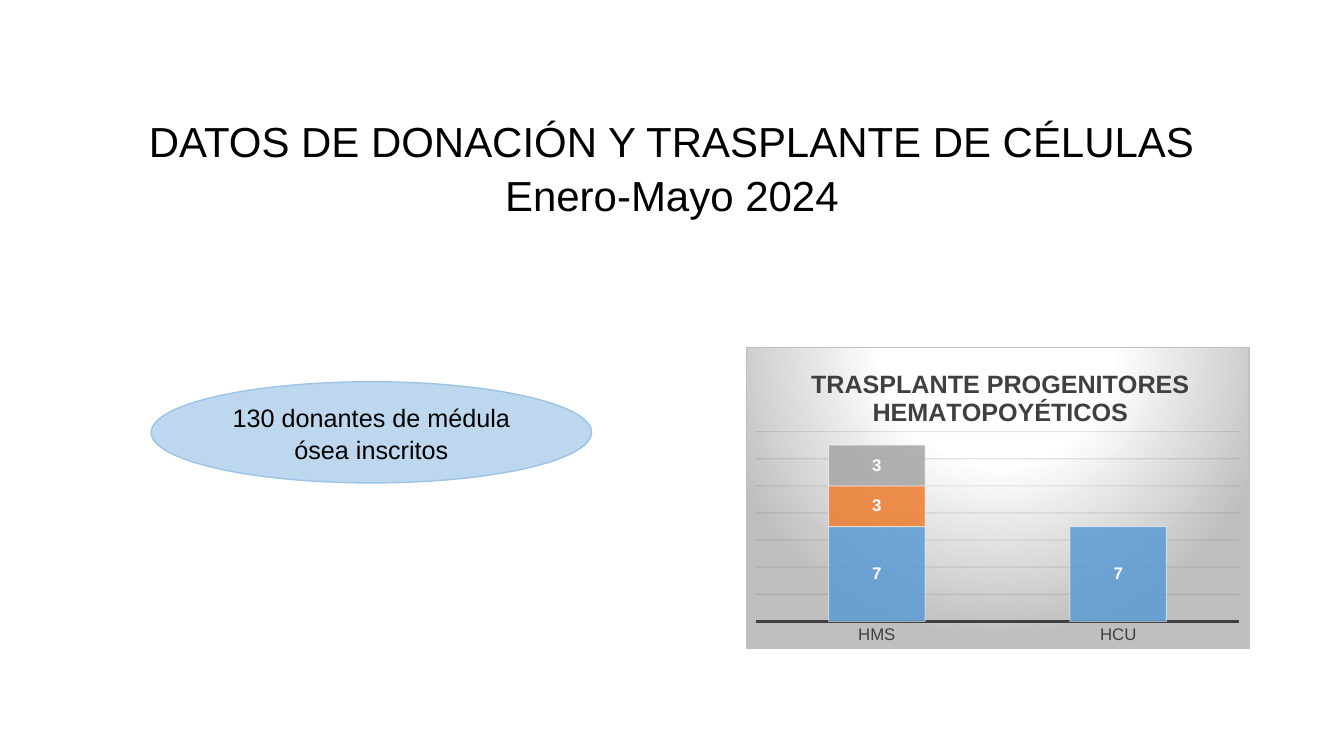
from lxml.etree import SubElement
from pptx import Presentation
from pptx.chart.data import CategoryChartData
from pptx.dml.color import RGBColor
from pptx.enum.chart import XL_CHART_TYPE, XL_LABEL_POSITION, XL_TICK_MARK
from pptx.enum.shapes import MSO_SHAPE
from pptx.enum.text import MSO_ANCHOR, MSO_AUTO_SIZE, PP_ALIGN
from pptx.oxml import parse_xml
from pptx.oxml.ns import nsdecls, qn
from pptx.util import Cm, Pt


def paint(target, color):
    """Give a fill a solid colour."""
    target.solid()
    target.fore_color.rgb = RGBColor.from_string(color)


def style(font, size, color, bold=False):
    """Set the Arial font used across the slide."""
    font.name = "Arial"
    font.size = Pt(size)
    font.bold = bold
    font.color.rgb = RGBColor.from_string(color)


def write(frame, lines, size):
    """Write centred black lines, one paragraph each."""
    for i, line in enumerate(lines):
        para = frame.add_paragraph() if i else frame.paragraphs[0]
        para.alignment = PP_ALIGN.CENTER
        para.line_spacing = 1.07
        run = para.add_run()
        run.text = line
        style(run.font, size, "000000")


def stroke(line, color, width):
    """Set the colour and width of a line."""
    paint(line.fill, color)
    line.width = Pt(width)


def fade(root, query, alpha):
    """Set the opacity in percent of the colours that a query finds."""
    for color in root.xpath(query):
        SubElement(color, qn("a:alpha")).set("val", str(alpha * 1000))


def place(node, index, **sides):
    """Give a chart part a manual layout in fractions of the chart."""
    for old in node.findall(qn("c:layout")):
        node.remove(old)
    target = '<c:layoutTarget val="inner"/>' if "w" in sides else ""
    modes = "".join(f'<c:{s}Mode val="edge"/>' for s in "xy")
    sizes = "".join(f'<c:{s} val="{v}"/>' for s, v in sides.items())
    node.insert(index, parse_xml(
        f'<c:layout {nsdecls("c")}><c:manualLayout>{target}{modes}{sizes}'
        '</c:manualLayout></c:layout>'))


def add_title(slide):
    """Fill and place the title."""
    title = slide.shapes.title
    title.left, title.top = Cm(0), Cm(2.69)
    title.width, title.height = Cm(33.87), Cm(2.82)
    frame = title.text_frame
    frame.auto_size = MSO_AUTO_SIZE.NONE
    frame.vertical_anchor = MSO_ANCHOR.TOP
    write(frame, ["DATOS DE DONACIÓN Y TRASPLANTE DE CÉLULAS",
                  "Enero-Mayo 2024"], 30)


def add_oval(slide):
    """Add the oval with the number of donors."""
    oval = slide.shapes.add_shape(
        MSO_SHAPE.OVAL, Cm(3.81), Cm(9.62), Cm(11.1), Cm(2.55))
    oval.shadow.inherit = False
    paint(oval.fill, "BDD7EE")
    stroke(oval.line, "9DC3E6", 1)
    oval.text_frame.word_wrap = True
    oval.text_frame.vertical_anchor = MSO_ANCHOR.MIDDLE
    write(oval.text_frame, ["130 donantes de médula ósea inscritos"], 18)


def add_back(chart):
    """Give the chart its radial grey background and border."""
    stops = "".join(
        f'<a:gs pos="{pos * 1000}"><a:srgbClr val="{color}"/></a:gs>'
        for pos, color in [(0, "FFFFFF"), (39, "FFFFFF"), (100, "BFBFBF")])
    back = parse_xml(
        f'<c:spPr {nsdecls("c", "a")}><a:gradFill><a:gsLst>{stops}</a:gsLst>'
        '<a:path path="circle"><a:fillToRect l="50000" t="-80000" r="50000"'
        ' b="180000"/></a:path></a:gradFill><a:ln w="9525"><a:solidFill>'
        '<a:srgbClr val="BFBFBF"/></a:solidFill></a:ln></c:spPr>')
    chart.element.find(qn("c:chart")).addnext(back)


def style_axes(chart):
    """Format the category axis and the grid of the hidden value axis."""
    cats, vals = chart.category_axis, chart.value_axis
    cats.major_tick_mark = XL_TICK_MARK.NONE
    style(cats.tick_labels.font, 12, "404040")
    stroke(cats.format.line, "404040", 1.5)
    vals.minimum_scale, vals.maximum_scale, vals.major_unit = 0, 14, 2
    vals.has_major_gridlines = True
    stroke(vals.major_gridlines.format.line, "0D0D0D", 0.75)
    fade(chart.element, ".//c:majorGridlines//a:srgbClr", 10)
    vals.visible = False


def style_bars(plot):
    """Format the stacked bars and their labels."""
    plot.gap_width, plot.overlap = 150, 100
    plot.vary_by_categories = False
    for series, color in zip(plot.series, ["5B9BD5", "ED7D31", "A5A5A5"]):
        paint(series.format.fill, color)
        stroke(series.format.line, "FFFFFF", 0.75)
        fade(series._element, "c:spPr/a:solidFill/a:srgbClr", 85)
        fade(series._element, "c:spPr/a:ln//a:srgbClr", 50)
        labels = series.data_labels
        labels.show_value = True
        labels.position = XL_LABEL_POSITION.CENTER
        style(labels.font, 12, "FFFFFF", True)


def add_chart(slide):
    """Add the chart of transplants by hospital."""
    data = CategoryChartData()
    data.categories = ["HMS", "HCU"]
    for i, vals in enumerate([(7, 7), (3, None), (3, None)], 1):
        data.add_series(f"Series {i}", vals)
    chart = slide.shapes.add_chart(
        XL_CHART_TYPE.COLUMN_STACKED, Cm(18.79), Cm(8.74), Cm(12.7),
        Cm(7.62), data).chart
    chart.has_legend = False
    chart.font.name, chart.font.size = "Calibri", Pt(10)
    chart.has_title = True
    title = chart.chart_title
    run = title.text_frame.paragraphs[0].add_run()
    run.text = "TRASPLANTE PROGENITORES HEMATOPOYÉTICOS"
    style(run.font, 18, "404040", True)
    title.include_in_layout = False
    place(title._element, 1, x=0.12, y=0.05)
    place(chart.element.find(".//" + qn("c:plotArea")), 0,
          x=0.02, y=0.28, w=0.96, h=0.63)
    style_axes(chart)
    style_bars(chart.plots[0])
    add_back(chart)


def main():
    """Build the slide and save it."""
    deck = Presentation()
    deck.slide_width, deck.slide_height = Cm(33.87), Cm(19.05)
    slide = deck.slides.add_slide(deck.slide_layouts[5])
    paint(slide.background.fill, "FFFFFF")
    add_title(slide)
    add_oval(slide)
    add_chart(slide)
    deck.save("out.pptx")


if __name__ == "__main__":
    main()
